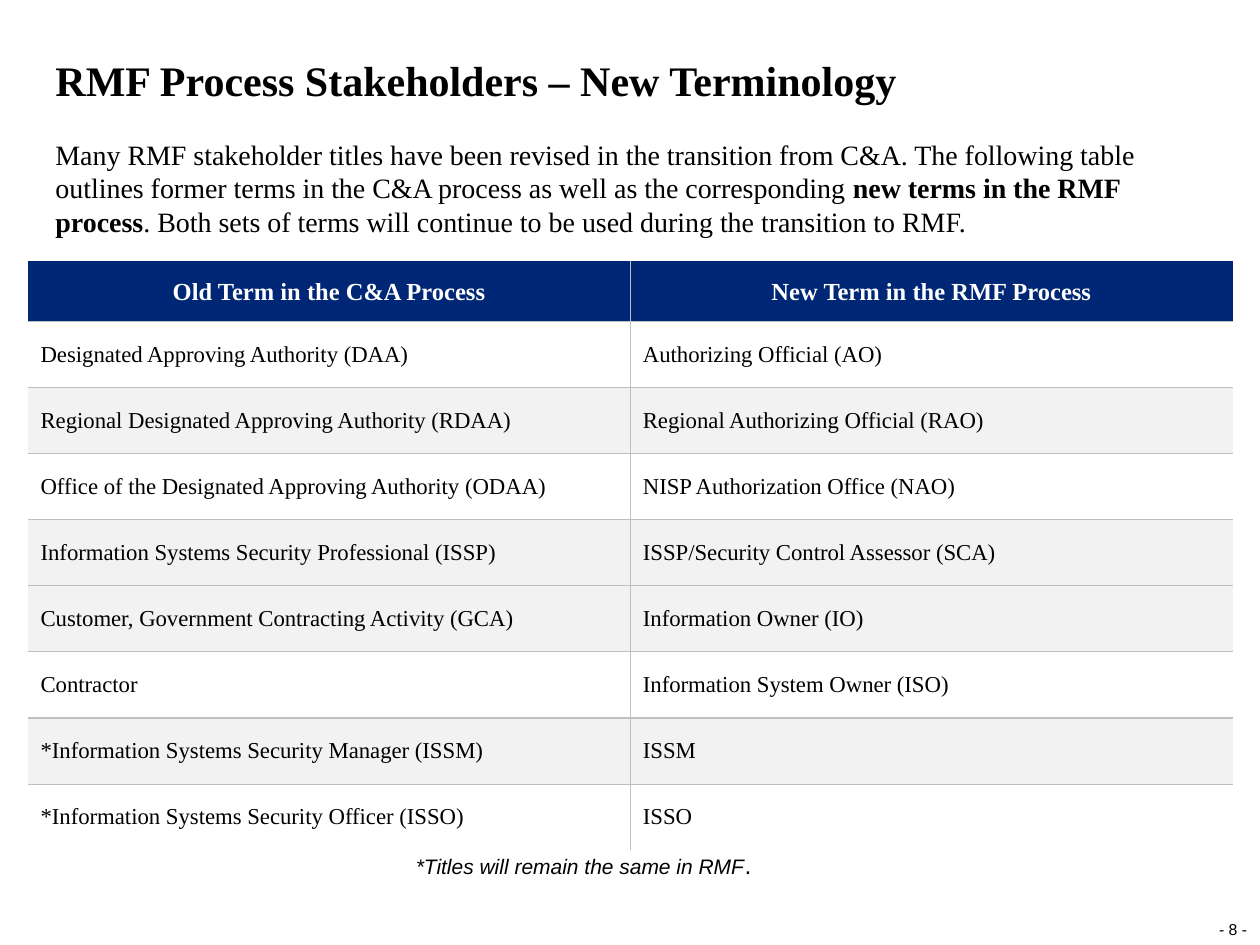
from lxml.etree import SubElement
from pptx import Presentation
from pptx.dml.color import RGBColor
from pptx.enum.text import MSO_ANCHOR as Anchor, PP_ALIGN as Align
from pptx.oxml.ns import qn
from pptx.util import Pt

# Content
TITLE = "RMF Process Stakeholders – New Terminology"
INTRO = [
    ("Many RMF stakeholder titles have been revised in the transition from C&A. "
     "The following table outlines former terms in the C&A process as well as the "
     "corresponding ", {}),
    ("new terms in the RMF process", {"bold": True}),
    (". Both sets of terms will continue to be used during the transition to RMF.", {}),
]
HEADINGS = ("Old Term in the C&A Process", "New Term in the RMF Process")
TERMS = [  # old term, new term, shaded row
    ("Designated Approving Authority (DAA)", "Authorizing Official (AO)", False),
    ("Regional Designated Approving Authority (RDAA)", "Regional Authorizing Official (RAO)", True),
    ("Office of the Designated Approving Authority (ODAA)", "NISP Authorization Office (NAO)", False),
    ("Information Systems Security Professional (ISSP)", "ISSP/Security Control Assessor (SCA)", True),
    ("Customer, Government Contracting Activity (GCA)", "Information Owner (IO)", True),
    ("Contractor", "Information System Owner (ISO)", False),
    ("*Information Systems Security Manager (ISSM)", "ISSM", True),
    ("*Information Systems Security Officer (ISSO)", "ISSO", False),
]
FOOTNOTE = [("*Titles will remain the same in RMF", {"italic": True}), (".", {"size": 14})]
PAGE_NUMBER = "- 8 -"

THEME = {
    "serif": "Times New Roman", "sans": "Arial",
    "text": "000000", "header_text": "FFFFFF", "header": "002776",
    "shade": "F2F2F2", "rule": "BFBFBF",
    "title": 24, "intro": 16, "heading": 14, "term": 13, "note": 12, "page": 9,
}

# Layout in points: left, top, width, height
SLIDE = (720, 540)
TITLE_AT = (31.7, 34.5, 578, 26)
INTRO_AT = (31.7, 78.5, 656.6, 36.7)
TABLE_AT = (16, 149.8, 688.4, 336.3)
FOOTNOTE_AT = (237.6, 486, 283.7, 18.7)
PAGE_AT = (693.4, 524.9, 22.3, 11.5)
HEADER_HEIGHT = 33.8


def write(frame, content, *, size, font=THEME["serif"], color=THEME["text"],
          bold=False, align=Align.LEFT, spacing=None):
    """Fill the first paragraph with a string or a list of (text, overrides) runs."""
    paragraph = frame.paragraphs[0]
    paragraph.alignment = align
    if spacing:
        paragraph.line_spacing = spacing
    for text, changes in [(content, {})] if isinstance(content, str) else content:
        run = paragraph.add_run()
        run.text = text
        run.font.name = font
        run.font.size = Pt(changes.get("size", size))
        run.font.bold = changes.get("bold", bold)
        run.font.italic = changes.get("italic", False)
        run.font.color.rgb = RGBColor.from_string(color)


def set_frame(frame, anchor=Anchor.TOP, wrap=True):
    frame.margin_left = frame.margin_right = frame.margin_top = frame.margin_bottom = 0
    frame.vertical_anchor = anchor
    frame.word_wrap = wrap
    return frame


def add_text(slide, at, content, anchor=Anchor.TOP, wrap=True, **fmt):
    box = slide.shapes.add_textbox(*map(Pt, at))
    write(set_frame(box.text_frame, anchor, wrap), content, **fmt)


def set_borders(cell, **edges):
    """Draw the given edges as (color, width); hide the others."""
    properties = cell._tc.get_or_add_tcPr()
    for position, edge in enumerate(("left", "right", "top", "bottom")):
        line = properties.makeelement(qn("a:ln" + edge[0].upper()), {})
        properties.insert(position, line)
        if edges.get(edge):
            color, width = edges[edge]
            line.set("w", str(Pt(width)))
            fill = SubElement(line, qn("a:solidFill"))
            SubElement(fill, qn("a:srgbClr"), val=color)
        else:
            SubElement(line, qn("a:noFill"))


def add_terms_table(slide):
    rows = [(*HEADINGS, True), *TERMS]
    table = slide.shapes.add_table(len(rows), len(HEADINGS), *map(Pt, TABLE_AT)).table
    table.horz_banding = False
    for column in table.columns:
        column.width = Pt(TABLE_AT[2] / len(HEADINGS))
    term_height = (TABLE_AT[3] - HEADER_HEIGHT) / len(TERMS)
    rule = (THEME["rule"], 0.75)

    for r, (*terms, shaded) in enumerate(rows):
        is_header = r == 0
        table.rows[r].height = Pt(HEADER_HEIGHT if is_header else term_height)
        for c, term in enumerate(terms):
            cell = table.cell(r, c)
            cell.vertical_anchor = Anchor.MIDDLE
            if shaded:
                cell.fill.solid()
                cell.fill.fore_color.rgb = RGBColor.from_string(
                    THEME["header" if is_header else "shade"])
            else:
                cell.fill.background()
            set_borders(cell,
                        left=rule if c > 0 else None,
                        right=rule if c < len(terms) - 1 else None,
                        top=(THEME["header"], 1) if is_header else rule,
                        bottom=rule if r < len(rows) - 1 else None)
            if is_header:
                write(cell.text_frame, term, size=THEME["heading"], bold=True,
                      color=THEME["header_text"], align=Align.CENTER)
            else:
                write(cell.text_frame, term, size=THEME["term"])


def main():
    deck = Presentation()
    deck.slide_width, deck.slide_height = map(Pt, SLIDE)
    slide = deck.slides.add_slide(deck.slide_layouts[5])

    # Title
    title = slide.shapes.title
    title.left, title.top, title.width, title.height = map(Pt, TITLE_AT)
    write(set_frame(title.text_frame, Anchor.BOTTOM), TITLE,
          size=THEME["title"], bold=True, spacing=0.9)

    # Introduction, terms and footnote
    add_text(slide, INTRO_AT, INTRO, size=THEME["intro"])
    add_terms_table(slide)
    add_text(slide, FOOTNOTE_AT, FOOTNOTE, size=THEME["note"], font=THEME["sans"])

    # Page number
    add_text(slide, PAGE_AT, PAGE_NUMBER, anchor=Anchor.BOTTOM, wrap=False,
             size=THEME["page"], font=THEME["sans"], align=Align.CENTER, spacing=1.06)

    deck.save("out.pptx")


if __name__ == "__main__":
    main()
